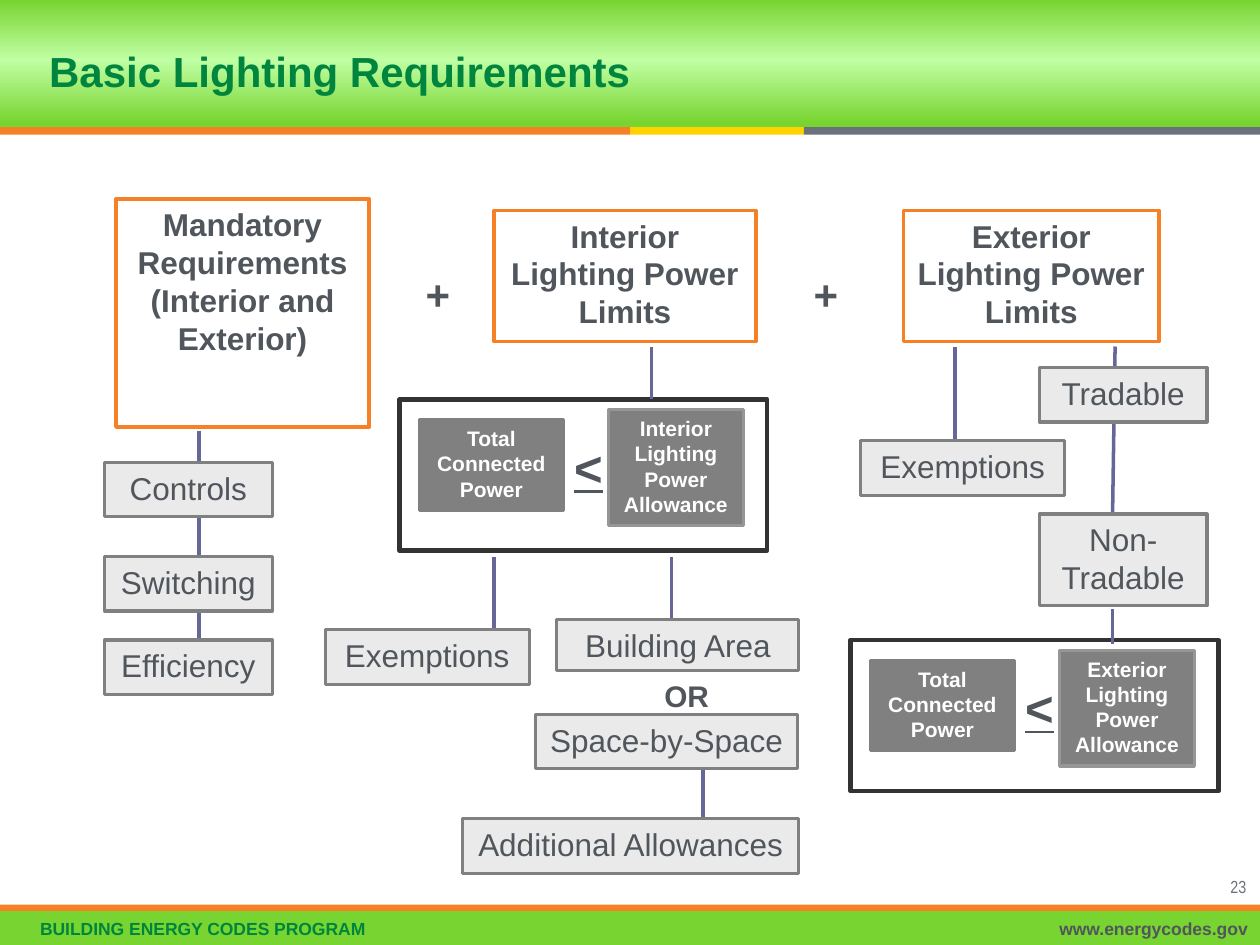
from lxml import etree
from pptx import Presentation
from pptx.dml.color import RGBColor
from pptx.enum.shapes import MSO_CONNECTOR, MSO_SHAPE
from pptx.enum.text import MSO_ANCHOR, PP_ALIGN
from pptx.oxml import parse_xml
from pptx.oxml.ns import nsdecls, qn
from pptx.util import Inches, Pt

RECT = MSO_SHAPE.RECTANGLE
STRAIGHT = MSO_CONNECTOR.STRAIGHT
LEFT, CENTER, RIGHT = PP_ALIGN.LEFT, PP_ALIGN.CENTER, PP_ALIGN.RIGHT
TOP, MIDDLE = MSO_ANCHOR.TOP, MSO_ANCHOR.MIDDLE

COLORS = {
    "green": "78D430",
    "light_green": "C0FFA4",
    "title": "00853F",
    "orange": "F58025",
    "yellow": "FFD200",
    "slate": "6A737B",
    "text": "50565C",
    "white": "FFFFFF",
    "pale": "EAEAEA",
    "gray": "808080",
    "mid_gray": "969696",
    "frame": "333333",
    "connector": "666699",
}


def rgb(name):
    return RGBColor.from_string(COLORS[name])


def write(sp, text, size, color="text", bold=False, align=CENTER,
          anchor=TOP, font="Arial", underline=False):
    tf = sp.text_frame
    tf.text = text
    tf.word_wrap = True
    tf.vertical_anchor = anchor
    p = tf.paragraphs[0]
    p.alignment = align
    f = p.runs[0].font
    f.name, f.size, f.bold = font, Pt(size), bold
    f.underline = underline
    f.color.rgb = rgb(color)
    return p


def add_rect(slide, x, y, w, h, fill=None, line=None, width=1.75):
    sp = slide.shapes.add_shape(RECT, Inches(x), Inches(y), Inches(w), Inches(h))
    sp.shadow.inherit = False
    if fill:
        sp.fill.solid()
        sp.fill.fore_color.rgb = rgb(fill)
    else:
        sp.fill.background()
    if line:
        sp.line.color.rgb = rgb(line)
        sp.line.width = Pt(width)
    else:
        sp.line.fill.background()
    return sp


def add_label(slide, x, y, w, h, text, size, **style):
    sp = slide.shapes.add_textbox(Inches(x), Inches(y), Inches(w), Inches(h))
    return write(sp, text, size, **style)


def add_header(slide):
    sp = add_rect(slide, 0, 0, 10, 1.01)
    stops = "".join(
        f'<a:gs pos="{pos * 1000}"><a:srgbClr val="{COLORS[name]}"/></a:gs>'
        for pos, name in ((0, "green"), (47, "light_green"), (97, "green")))
    gradient = parse_xml(
        f'<a:gradFill {nsdecls("a")} rotWithShape="1"><a:gsLst>{stops}</a:gsLst>'
        '<a:lin ang="5400000" scaled="0"/></a:gradFill>')
    props = sp._element.spPr
    props.replace(props.find(qn("a:noFill")), gradient)
    for x, w, color in ((0, 5, "orange"), (5, 1.38, "yellow"), (6.38, 3.62, "slate")):
        add_rect(slide, x, 1.01, w, 0.06, color)


def add_title(slide, text):
    title = slide.shapes.title
    title.left, title.top = Inches(0.29), Inches(0.07)
    title.width, title.height = Inches(9.33), Inches(1)
    p = write(title, text, 24, color="title", bold=True, align=LEFT, anchor=MIDDLE)
    p.line_spacing = Pt(28)
    slide.shapes._spTree.append(title._element)


def add_footer(slide):
    add_rect(slide, 0, 7.23, 10, 0.27, "green")
    add_rect(slide, 0, 7.18, 10, 0.05, "orange")
    add_label(slide, 0.22, 7.24, 5, 0.26, "BUILDING ENERGY CODES PROGRAM", 10,
              color="title", bold=True, align=LEFT, anchor=MIDDLE)
    add_label(slide, 5.99, 7.24, 4.01, 0.26, "www.energycodes.gov", 10,
              bold=True, align=RIGHT, anchor=MIDDLE)
    add_label(slide, 9.28, 6.9, 0.71, 0.18, "23", 10,
              color="slate", align=RIGHT, font="Arial Narrow")


def add_category(slide, x, y, w, h, text):
    sp = add_rect(slide, x, y, w, h, "white", "orange", 2)
    write(sp, text, 18, bold=True)


def add_item(slide, x, y, w, text, h=0.43):
    sp = add_rect(slide, x, y, w, h, "pale", "gray")
    write(sp, text, 18)


def add_comparison(slide, x, y, allowance):
    total = add_rect(slide, x + 0.16, y + 0.16, 1.14, 0.72, "gray", "gray")
    write(total, "Total Connected Power", 12, color="white", bold=True)
    limit = add_rect(slide, x + 1.66, y + 0.08, 1.07, 0.92, "gray", "mid_gray")
    write(limit, allowance, 12, color="white", bold=True)
    add_label(slide, x + 1.16, y + 0.25, 0.68, 0.57, "<", 28,
              bold=True, underline=True)
    add_rect(slide, x, y, 2.92, 1.2, line="frame", width=2.5)


def add_line(slide, x1, y1, x2, y2):
    line = slide.shapes.add_connector(
        STRAIGHT, Inches(x1), Inches(y1), Inches(x2), Inches(y2))
    line.line.color.rgb = rgb("connector")
    line.line.width = Pt(2)
    etree.SubElement(line._element.spPr, qn("a:effectLst"))


def main():
    prs = Presentation()
    prs.slide_width, prs.slide_height = Inches(10), Inches(7.5)
    slide = prs.slides.add_slide(prs.slide_layouts[5])

    add_header(slide)
    add_footer(slide)
    add_title(slide, "Basic Lighting Requirements")

    for category in (
        (0.92, 1.58, 2.01, 1.81, "Mandatory Requirements (Interior and Exterior)"),
        (3.92, 1.67, 2.08, 1.04, "Interior Lighting Power Limits"),
        (7.17, 1.67, 2.03, 1.04, "Exterior Lighting Power Limits"),
    ):
        add_category(slide, *category)
    for x in (3.14, 6.22):
        add_label(slide, x, 2.08, 0.67, 0.5, "+", 24, bold=True)

    add_comparison(slide, 3.17, 3.17, "Interior Lighting Power Allowance")
    add_comparison(slide, 6.75, 5.08, "Exterior Lighting Power Allowance")

    for ends in (
        (1.58, 3.42, 1.58, 5.36),
        (5.17, 2.75, 5.17, 3.17),
        (3.92, 4.42, 3.92, 5),
        (5.33, 4.42, 5.33, 4.94),
        (5.58, 6.08, 5.58, 6.5),
        (7.58, 2.75, 7.58, 3.5),
        (8.85, 2.75, 8.83, 4.08),
        (8.83, 4.83, 8.83, 5.11),
    ):
        add_line(slide, *ends)

    for item in (
        (0.83, 3.67, 1.33, "Controls"),
        (0.83, 4.42, 1.33, "Switching"),
        (0.83, 5.08, 1.33, "Efficiency"),
        (2.58, 5, 1.62, "Exemptions"),
        (4.42, 4.92, 1.92, "Building Area", 0.4),
        (4.25, 5.67, 2.08, "Space-by-Space"),
        (3.67, 6.5, 2.67, "Additional Allowances"),
        (6.83, 3.5, 1.62, "Exemptions"),
        (8.25, 2.92, 1.33, "Tradable"),
        (8.25, 4.08, 1.33, "Non-Tradable", 0.73),
    ):
        add_item(slide, *item)
    add_label(slide, 4.92, 5.33, 1.06, 0.38, "OR", 17, bold=True)

    prs.save("out.pptx")


if __name__ == "__main__":
    main()
